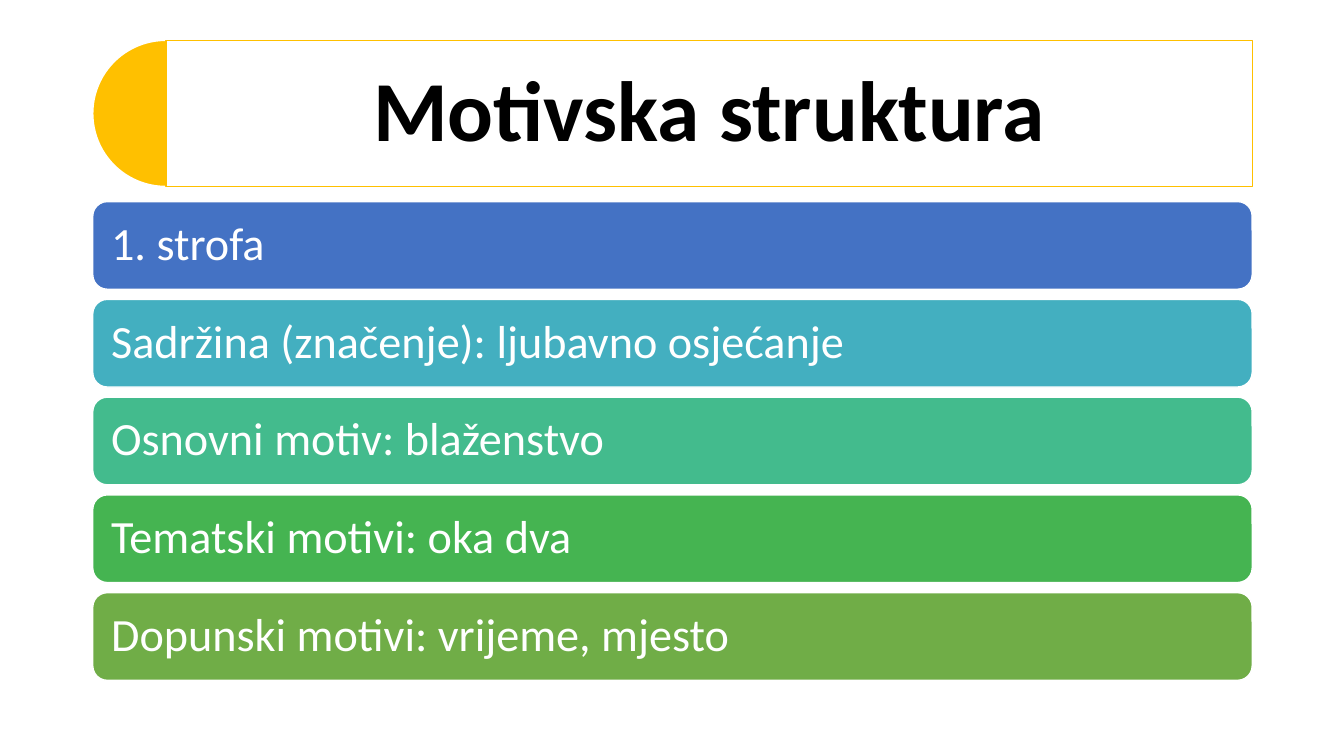
from dataclasses import dataclass

import pptx
import pptx.dml.color
import pptx.enum.shapes
import pptx.enum.text
import pptx.oxml.ns
import pptx.util
from lxml import etree

Inches = pptx.util.Inches
Pt = pptx.util.Pt
MSO_SHAPE = pptx.enum.shapes.MSO_SHAPE
PP_ALIGN = pptx.enum.text.PP_ALIGN


@dataclass(frozen=True)
class Theme:
    font: str = "Calibri"
    white: str = "FFFFFF"
    black: str = "000000"
    accent: str = "FFC000"
    bars: tuple = ("4472C4", "43AFC0", "43BB8D", "45B451", "70AD47")
    title_size: int = 61
    bar_size: int = 33
    line_width: int = 1


THEME = Theme()
LEFT, WIDTH = 0.92, 11.5
TITLE_TOP, TITLE_HEIGHT = 0.4, 1.45
BAR_TOP, BAR_HEIGHT, BAR_STEP = 2.0, 0.87, 0.97
BAR_TEXTS = (
    "1. strofa",
    "Sadržina (značenje): ljubavno osjećanje",
    "Osnovni motiv: blaženstvo",
    "Tematski motivi: oka dva",
    "Dopunski motivi: vrijeme, mjesto",
)


def rgb(color):
    return pptx.dml.color.RGBColor.from_string(color)


def add_box(s, kind, left, top, width, height, fill, line):
    sp = s.shapes.add_shape(
        kind, Inches(left), Inches(top), Inches(width), Inches(height)
    )
    sp.shadow.inherit = False
    sp.fill.solid()
    sp.fill.fore_color.rgb = rgb(fill)
    sp.line.color.rgb = rgb(line)
    sp.line.width = Pt(THEME.line_width)
    return sp


def set_opacity(sp, percent):
    qn = pptx.oxml.ns.qn
    color = sp.fill._xPr.find(qn("a:solidFill")).find(qn("a:srgbClr"))
    etree.SubElement(color, qn("a:alpha")).set("val", str(percent * 1000))


def set_text(sp, text, size, color, align, inset, bold=False):
    tf = sp.text_frame
    tf.word_wrap = True
    tf.vertical_anchor = pptx.enum.text.MSO_ANCHOR.MIDDLE
    tf.margin_left = tf.margin_right = Inches(inset)
    tf.margin_top = tf.margin_bottom = Inches(inset)
    p = tf.paragraphs[0]
    p.alignment = align
    p.line_spacing = 0.9
    r = p.add_run()
    r.text = text
    r.font.name = THEME.font
    r.font.size = Pt(size)
    r.font.bold = bold
    r.font.color.rgb = rgb(color)


def add_title(s, text):
    pie = add_box(s, MSO_SHAPE.PIE, LEFT, TITLE_TOP, TITLE_HEIGHT,
                  TITLE_HEIGHT, THEME.accent, THEME.white)
    pie.adjustments[0] = 54
    pie.adjustments[1] = 162
    radius = TITLE_HEIGHT / 2
    panel = add_box(s, MSO_SHAPE.RECTANGLE, LEFT + radius, TITLE_TOP,
                    WIDTH - radius, TITLE_HEIGHT, THEME.white, THEME.accent)
    set_opacity(panel, 90)
    set_text(panel, text, THEME.title_size, THEME.black,
             PP_ALIGN.CENTER, 0.25, bold=True)


def add_bar(s, row, text, fill):
    sp = add_box(s, MSO_SHAPE.ROUNDED_RECTANGLE, LEFT,
                 BAR_TOP + row * BAR_STEP, WIDTH, BAR_HEIGHT,
                 fill, THEME.white)
    set_text(sp, text, THEME.bar_size, THEME.white, PP_ALIGN.LEFT, 0.14)


def main():
    prs = pptx.Presentation()
    prs.slide_width = Inches(13.33)
    prs.slide_height = Inches(7.5)
    s = prs.slides.add_slide(prs.slide_layouts[6])
    add_title(s, "Motivska struktura")
    for row, (text, fill) in enumerate(zip(BAR_TEXTS, THEME.bars)):
        add_bar(s, row, text, fill)
    prs.save("out.pptx")


if __name__ == "__main__":
    main()
